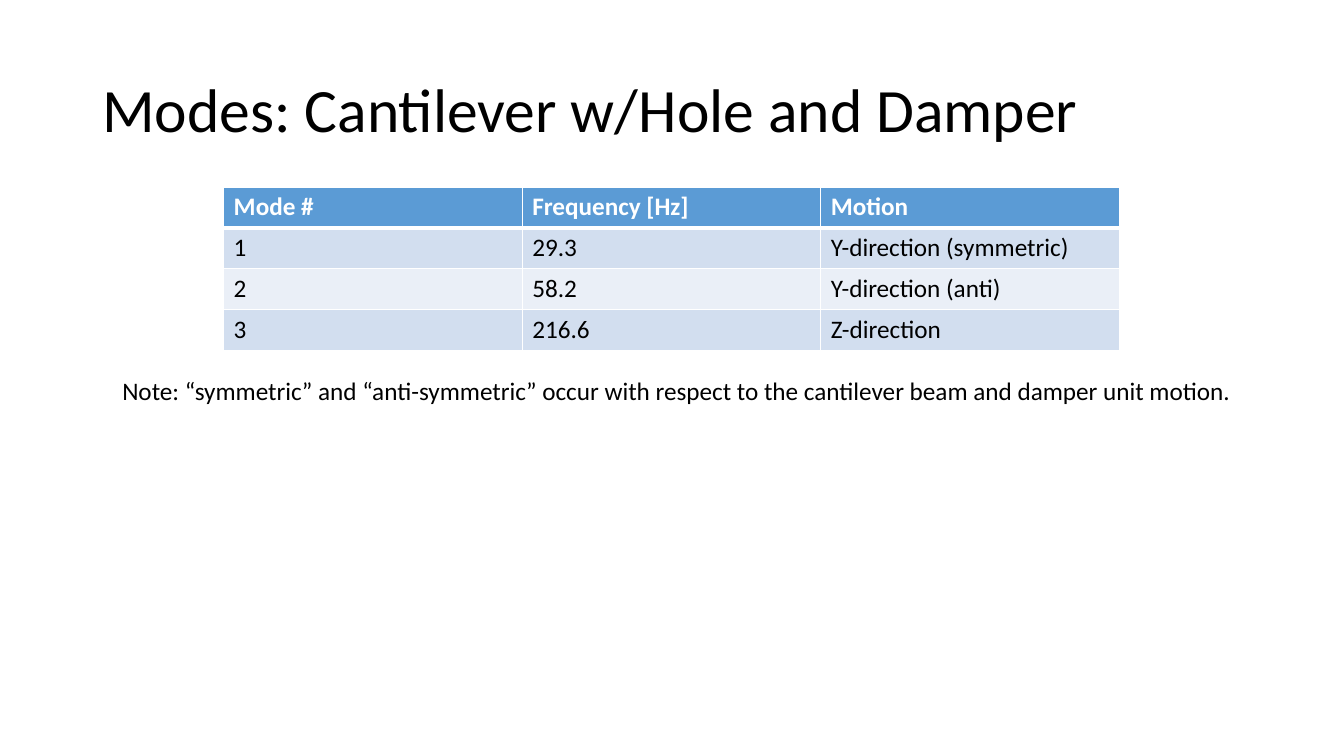
from lxml import etree
from pptx import Presentation
from pptx.dml.color import RGBColor
from pptx.enum.text import MSO_ANCHOR
from pptx.oxml.ns import qn
from pptx.util import Emu, Pt

MIDDLE, TOP = MSO_ANCHOR.MIDDLE, MSO_ANCHOR.TOP
EMU_PER_PX = 9525
FONT = "Calibri"
BLACK, WHITE = "000000", "FFFFFF"
HEADER_FILL = "5B9BD5"
BAND_FILLS = ["D2DEEF", "EAEFF7"]
MODES = [
    ["Mode #", "Frequency [Hz]", "Motion"],
    ["1", "29.3", "Y-direction (symmetric)"],
    ["2", "58.2", "Y-direction (anti)"],
    ["3", "216.6", "Z-direction"],
]


def px(*lengths):
    return [Emu(length * EMU_PER_PX) for length in lengths]


def color(hex_value):
    return RGBColor.from_string(hex_value)


def write(text_frame, text, size, hex_value=BLACK, bold=False):
    paragraph = text_frame.paragraphs[0]
    run = paragraph.add_run()
    run.text = text
    for name, value in {"name": FONT, "size": Pt(size), "bold": bold}.items():
        setattr(run.font, name, value)
    run.font.color.rgb = color(hex_value)
    return paragraph


def add_text(slide, box, text, size, anchor=TOP, line_spacing=1.0):
    text_frame = slide.shapes.add_textbox(*px(*box)).text_frame
    text_frame.word_wrap = True
    text_frame.vertical_anchor = anchor
    write(text_frame, text, size).line_spacing = line_spacing


def set_borders(cell, widths):
    properties = cell._tc.get_or_add_tcPr()
    for side, width in widths.items():
        line = etree.SubElement(properties, qn(f"a:ln{side}"), w=str(Pt(width)))
        fill = etree.SubElement(line, qn("a:solidFill"))
        etree.SubElement(fill, qn("a:srgbClr"), val=WHITE)


def add_mode_table(slide, box, rows):
    table = slide.shapes.add_table(len(rows), len(rows[0]), *px(*box)).table
    for row_index, row in enumerate(rows):
        is_header = row_index == 0
        fill = HEADER_FILL if is_header else BAND_FILLS[(row_index - 1) % 2]
        # The header is set off by a thicker rule below it
        widths = {"L": 1, "R": 1, "T": 3 if row_index == 1 else 1, "B": 3 if is_header else 1}
        for column_index, text in enumerate(row):
            cell = table.cell(row_index, column_index)
            set_borders(cell, widths)
            cell.fill.solid()
            cell.fill.fore_color.rgb = color(fill)
            write(cell.text_frame, text, 18, WHITE if is_header else BLACK, is_header)


def add_modes_slide(presentation):
    slide = presentation.slides.add_slide(presentation.slide_layouts[6])
    # Title
    add_text(slide, (88, 38, 1104, 139), "Modes: Cantilever w/Hole and Damper", 44, MIDDLE, 0.9)
    # Mode frequencies
    add_mode_table(slide, (213, 178, 853, 156), MODES)
    # Note below the table
    add_text(
        slide,
        (107, 353, 1085, 39),
        "Note: “symmetric” and “anti-symmetric” occur with respect to "
        "the cantilever beam and damper unit motion.",
        18,
    )


def main():
    presentation = Presentation()
    presentation.slide_width, presentation.slide_height = px(1280, 720)
    add_modes_slide(presentation)
    presentation.save("out.pptx")


if __name__ == "__main__":
    main()
